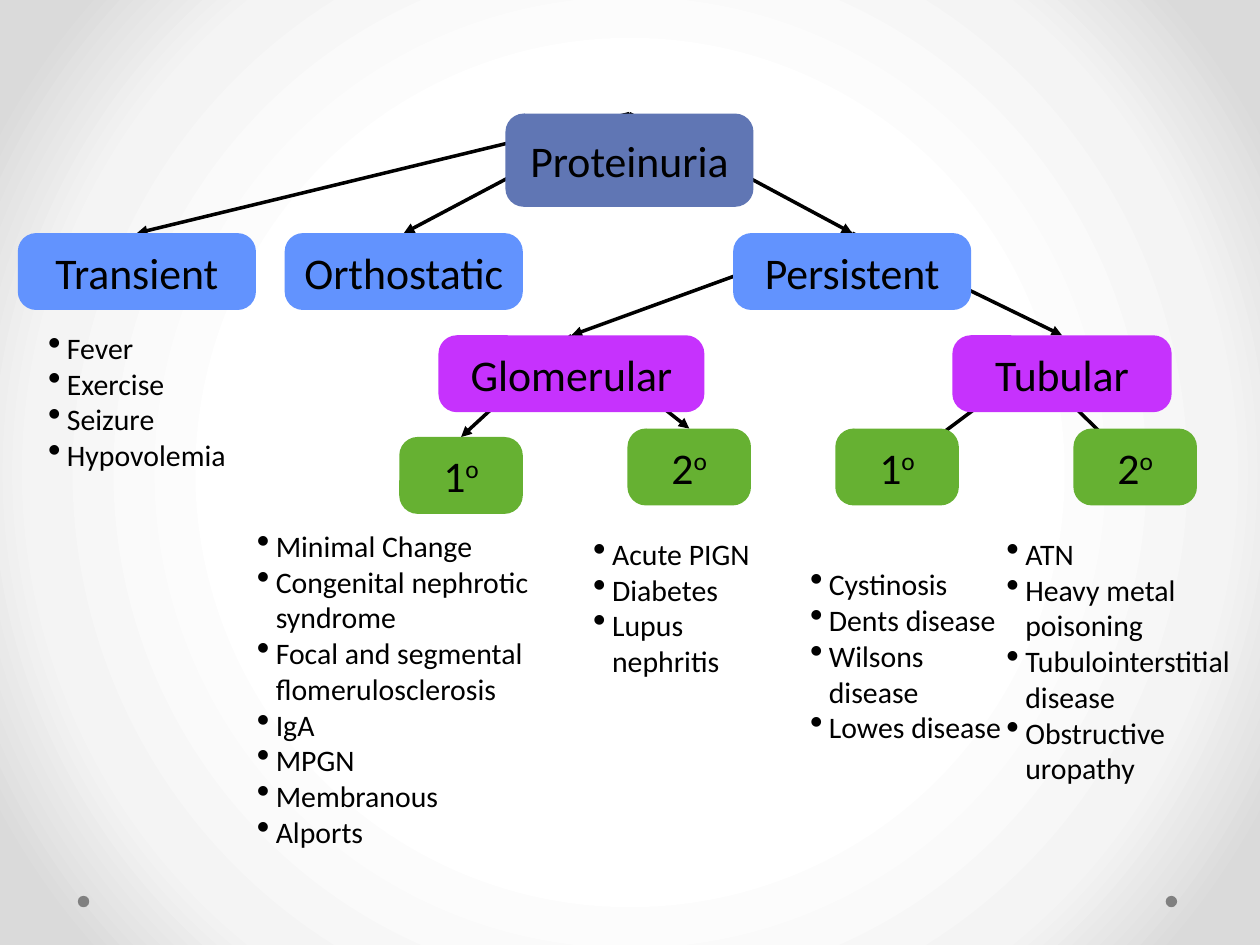
from dataclasses import dataclass

from lxml.etree import SubElement
from pptx import Presentation
from pptx.dml.color import RGBColor
from pptx.enum.shapes import MSO_CONNECTOR, MSO_SHAPE
from pptx.enum.text import MSO_ANCHOR, PP_ALIGN
from pptx.oxml import parse_xml
from pptx.oxml.ns import nsdecls, qn
from pptx.util import Cm, Pt


@dataclass(frozen=True)
class Theme:
    font: str = "Calibri"
    ink: str = "000000"
    root: str = "6076B4"
    kind: str = "6293FE"
    site: str = "C632FD"
    cause: str = "66B132"
    dot: str = "808080"
    glow: tuple = ((50, "FFFFFF"), (76, "F4F4F4"), (92, "DADADA"))
    label: int = 25
    item: int = 17
    line: int = 2


@dataclass(frozen=True)
class Box:
    text: str
    color: str
    left: float
    top: float
    width: float
    height: float = 1.55
    mark: str = ""

    def crown(self) -> tuple:
        return self.left + self.width / 2, self.top

    def center(self) -> tuple:
        return self.left + self.width / 2, self.top + self.height / 2


@dataclass(frozen=True)
class Notes:
    left: float
    top: float
    width: float
    height: float
    items: tuple


THEME = Theme()
RADIUS = 0.37
INDENT = 0.38


def cause(digit: str, left: float, top: float = 8.64) -> Box:
    return Box(digit, THEME.cause, left, top, 2.49, mark="o")


ROOT = Box("Proteinuria", THEME.root, 10.19, 2.29, 5, 1.88)
KINDS = [
    Box(name, THEME.kind, left, 4.7, 4.8)
    for name, left in (("Transient", 0.36), ("Orthostatic", 5.74), ("Persistent", 14.78))
]
GLOM = Box("Glomerular", THEME.site, 8.84, 6.76, 5.36)
TUBE = Box("Tubular", THEME.site, 19.2, 6.76, 4.42)
GLOM_KIDS = [cause("1", 8.05, 8.81), cause("2", 12.65)]
TUBE_KIDS = [cause("1", 16.84), cause("2", 21.64)]
BOXES = [ROOT, *KINDS, GLOM, TUBE, *GLOM_KIDS, *TUBE_KIDS]
TREE = [(ROOT, KINDS), (KINDS[-1], [GLOM, TUBE]), (GLOM, GLOM_KIDS)]
TUBE_HUB = (20.82, 7.37)

LISTS = [
    Notes(0.97, 6.6, 4.01, 2.97, ("Fever", "Exercise", "Seizure", "Hypovolemia")),
    Notes(5.18, 10.69, 6.35, 6.38, (
        "Minimal Change", "Congenital nephrotic syndrome",
        "Focal and segmental flomerulosclerosis", "IgA", "MPGN",
        "Membranous", "Alports")),
    Notes(11.96, 10.69, 3.84, 3.1, ("Acute PIGN", "Diabetes", "Lupus nephritis")),
    Notes(16.33, 10.69, 3.96, 5.05, (
        "Cystinosis", "Dents disease", "Wilsons disease", "Lowes disease")),
    Notes(20.29, 10.69, 4.85, 5.26, (
        "ATN", "Heavy metal poisoning", "Tubulointerstitial disease",
        "Obstructive uropathy")),
]


def paint(slide) -> None:
    stops = "".join(
        f'<a:gs pos="{pos * 1000}"><a:srgbClr val="{color}"/></a:gs>'
        for pos, color in THEME.glow
    )
    slide.element.cSld.insert(0, parse_xml(
        f'<p:bg {nsdecls("p", "a")}><p:bgPr><a:gradFill rotWithShape="1">'
        f'<a:gsLst>{stops}</a:gsLst><a:path path="circle">'
        '<a:fillToRect l="50000" t="50000" r="50000" b="50000"/></a:path>'
        '</a:gradFill><a:effectLst/></p:bgPr></p:bg>'
    ))


def add_solid(slide, preset, color: str, *frame: float):
    shape = slide.shapes.add_shape(preset, *map(Cm, frame))
    shape.shadow.inherit = False
    shape.fill.solid()
    shape.fill.fore_color.rgb = RGBColor.from_string(color)
    shape.line.fill.background()
    return shape


def add_arrow(slide, start: tuple, end: tuple) -> None:
    arrow = slide.shapes.add_connector(
        MSO_CONNECTOR.STRAIGHT, *map(Cm, (*start, *end)))
    arrow.line.color.rgb = RGBColor.from_string(THEME.ink)
    arrow.line.width = Pt(THEME.line)
    SubElement(arrow.line._get_or_add_ln(), qn("a:tailEnd"), type="triangle")
    SubElement(arrow._element.spPr, qn("a:effectLst"))


def set_frame(frame) -> None:
    frame.word_wrap = True
    frame.vertical_anchor = MSO_ANCHOR.MIDDLE
    frame.margin_left = frame.margin_right = 0
    frame.margin_top = frame.margin_bottom = 0


def set_font(para, size: int) -> None:
    para.font.name = THEME.font
    para.font.size = Pt(size)
    para.font.color.rgb = RGBColor.from_string(THEME.ink)


def add_box(slide, box: Box) -> None:
    shape = add_solid(slide, MSO_SHAPE.ROUNDED_RECTANGLE, box.color,
                      box.left, box.top, box.width, box.height)
    shape.adjustments[0] = RADIUS / box.height
    set_frame(shape.text_frame)
    para = shape.text_frame.paragraphs[0]
    para.alignment = PP_ALIGN.CENTER
    set_font(para, THEME.label)
    para.add_run().text = box.text
    if box.mark:
        run = para.add_run()
        run.text = box.mark
        run._r.get_or_add_rPr().set("baseline", "32000")


def add_notes(slide, notes: Notes) -> None:
    frame = slide.shapes.add_textbox(*map(
        Cm, (notes.left, notes.top, notes.width, notes.height))).text_frame
    set_frame(frame)
    for index, item in enumerate(notes.items):
        para = frame.add_paragraph() if index else frame.paragraphs[0]
        para.add_run().text = item
        props = para._p.get_or_add_pPr()
        props.set("marL", str(Cm(INDENT)))
        props.set("indent", str(-Cm(INDENT)))
        SubElement(props, qn("a:buSzPct"), val="125000")
        SubElement(props, qn("a:buChar"), char="•")
        set_font(para, THEME.item)


def main() -> None:
    deck = Presentation()
    deck.slide_width, deck.slide_height = Cm(25.4), Cm(19.05)
    slide = deck.slides.add_slide(deck.slide_layouts[6])
    paint(slide)
    for left in (23.5, 1.57):
        add_solid(slide, MSO_SHAPE.OVAL, THEME.dot, left, 18.06, 0.23, 0.23)
    for parent, kids in TREE:
        for kid in kids:
            add_arrow(slide, parent.crown(), kid.crown())
    for kid in TUBE_KIDS:
        add_arrow(slide, TUBE_HUB, kid.center())
    for box in BOXES:
        add_box(slide, box)
    for notes in LISTS:
        add_notes(slide, notes)
    deck.save("out.pptx")


if __name__ == "__main__":
    main()
